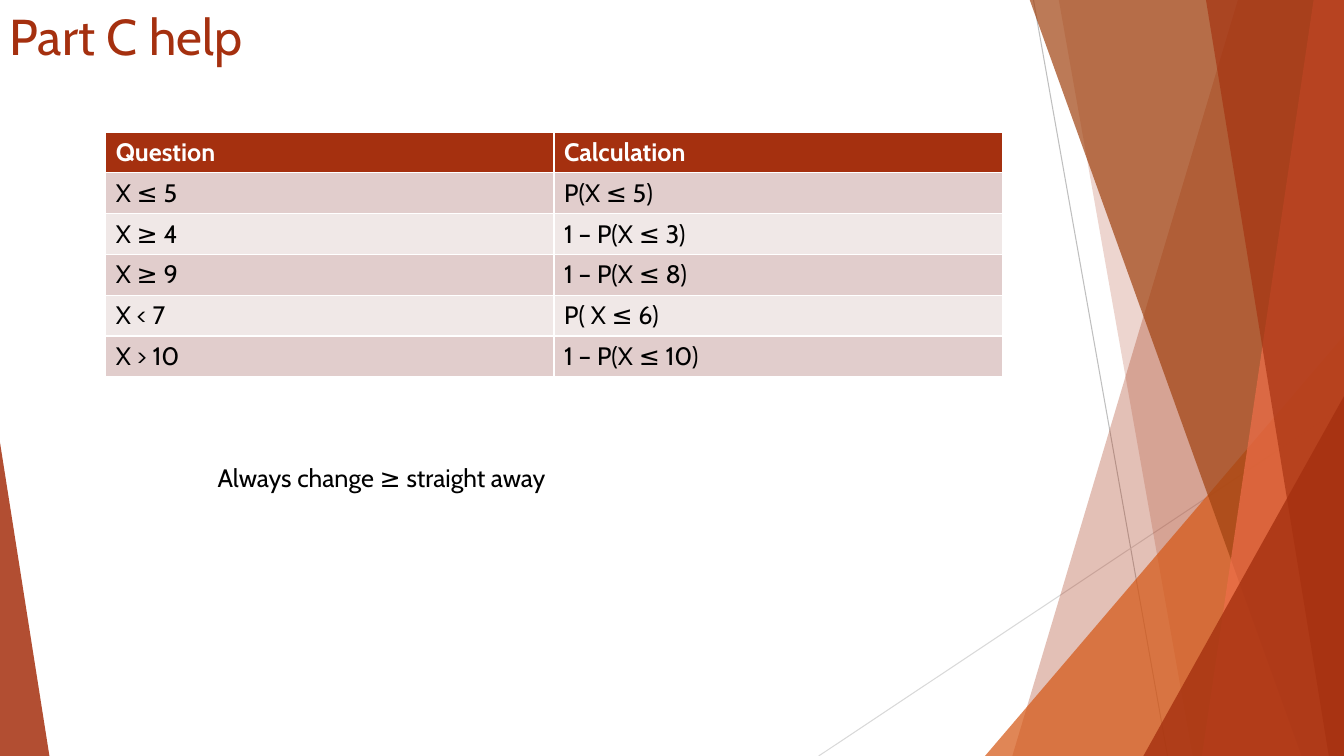
from dataclasses import dataclass

from lxml.etree import SubElement as Sub
from pptx import Presentation
from pptx.dml.color import RGBColor as Rgb
from pptx.enum.shapes import MSO_CONNECTOR as Link, MSO_SHAPE as Kind
from pptx.oxml.ns import qn
from pptx.shapes.autoshape import Shape
from pptx.slide import Slide
from pptx.text.text import TextFrame as Frame
from pptx.util import Inches, Pt

WIDE, HIGH = 13.33, 7.5


@dataclass(frozen=True)
class Theme:
    font: str = "Cabin"
    head: int = 36
    body: int = 18
    red: str = "A5300F"
    orange: str = "D55816"
    brown: str = "A04210"
    coral: str = "EE6E4A"
    black: str = "000000"
    white: str = "FFFFFF"
    dark: str = "E1CDCC"
    light: str = "F0E8E7"
    grey: str = "BFBFBF"
    pale: str = "D9D9D9"


LOOK = Theme()


@dataclass(frozen=True)
class Ray:
    start: tuple[float, float]
    end: tuple[float, float]
    color: str


@dataclass(frozen=True)
class Band:
    """A full-height facet whose left edge slants from top to foot."""
    top: float
    foot: float
    color: str
    alpha: int


@dataclass(frozen=True)
class Peak:
    """A triangle on the slide's lower edge; apex 0 is left, 1 is right."""
    left: float
    top: float
    width: float
    apex: int
    color: str
    alpha: int


@dataclass(frozen=True)
class Note:
    text: str
    box: tuple[float, float, float, float]
    size: int
    color: str
    wrap: bool


RAYS = [
    Ray((10.25, 0), (11.58, HIGH), LOOK.grey),
    Ray((WIDE, 4.03), (8.12, HIGH), LOOK.pale),
]
FACETS = [
    Band(12.28, 10.04, LOOK.red, 30),
    Band(10.5, 11.83, LOOK.red, 20),
    Peak(9.77, 3.33, 3.56, 1, LOOK.orange, 72),
    Band(10.21, 12.91, LOOK.brown, 70),
    Band(13.03, 11.92, LOOK.coral, 70),
    Band(11.96, 13.18, LOOK.red, 65),
    Peak(11.34, 3.93, 1.99, 1, LOOK.red, 80),
    Peak(0, 4.39, 0.49, 0, LOOK.red, 85),
]
NOTES = [
    Note("Part C help", (0, 0, 9.4, 0.78), LOOK.head, LOOK.red, True),
    Note("Always change ≥ straight away", (2.06, 4.54, 3.65, 0.4),
         LOOK.body, LOOK.black, False),
]
ROWS = [
    ("Question", "Calculation"),
    ("X ≤ 5", "P(X ≤ 5)"),
    ("X ≥ 4", "1 – P(X ≤ 3)"),
    ("X ≥ 9", "1 – P(X ≤ 8)"),
    ("X < 7", "P( X ≤ 6)"),
    ("X > 10", "1 – P(X ≤ 10)"),
]


def draw_ray(slide: Slide, ray: Ray) -> None:
    ends = [Inches(n) for n in ray.start + ray.end]
    line = slide.shapes.add_connector(Link.STRAIGHT, *ends)
    line.line.color.rgb = Rgb.from_string(ray.color)
    line.line.width = Pt(0.75)
    Sub(line._element.spPr, qn("a:effectLst"))


def add_band(slide: Slide, band: Band) -> Shape:
    edge = [(band.top, -0.01), (WIDE, -0.01), (WIDE, HIGH), (band.foot, HIGH)]
    first, *rest = [(Inches(x), Inches(y)) for x, y in edge]
    form = slide.shapes.build_freeform(*first)
    form.add_line_segments(rest, close=True)
    return form.convert_to_shape()


def add_peak(slide: Slide, peak: Peak) -> Shape:
    box = (peak.left, peak.top, peak.width, HIGH - peak.top)
    shape = slide.shapes.add_shape(Kind.ISOSCELES_TRIANGLE, *map(Inches, box))
    shape.adjustments[0] = peak.apex
    return shape


def draw_facet(slide: Slide, facet: Band | Peak) -> None:
    add = add_band if isinstance(facet, Band) else add_peak
    shape = add(slide, facet)
    shape.shadow.inherit = False
    shape.line.fill.background()
    shape.fill.solid()
    shape.fill.fore_color.rgb = Rgb.from_string(facet.color)
    tint = shape._element.spPr.find(qn("a:solidFill"))[0]
    Sub(tint, qn("a:alpha"), val=str(facet.alpha * 1000))


def put_text(frame: Frame, text: str, size: int, color: str,
             bold: bool = False) -> None:
    frame.text = text
    font = frame.paragraphs[0].runs[0].font
    font.name, font.size, font.bold = LOOK.font, Pt(size), bold
    font.color.rgb = Rgb.from_string(color)


def draw_note(slide: Slide, note: Note) -> None:
    frame = slide.shapes.add_textbox(*map(Inches, note.box)).text_frame
    frame.word_wrap = note.wrap
    put_text(frame, note.text, note.size, note.color)


def draw_table(slide: Slide) -> None:
    box = map(Inches, (1.05, 1.31, 8.89, 2.43))
    table = slide.shapes.add_table(len(ROWS), len(ROWS[0]), *box).table
    for r, row in enumerate(ROWS):
        head = r == 0
        fill = LOOK.red if head else LOOK.dark if r % 2 else LOOK.light
        ink = LOOK.white if head else LOOK.black
        for c, text in enumerate(row):
            cell = table.cell(r, c)
            cell.fill.solid()
            cell.fill.fore_color.rgb = Rgb.from_string(fill)
            put_text(cell.text_frame, text, LOOK.body, ink, head)


def main() -> None:
    deck = Presentation()
    deck.slide_width, deck.slide_height = Inches(WIDE), Inches(HIGH)
    slide = deck.slides.add_slide(deck.slide_layouts[6])
    for ray in RAYS:
        draw_ray(slide, ray)
    for facet in FACETS:
        draw_facet(slide, facet)
    for note in NOTES:
        draw_note(slide, note)
    draw_table(slide)
    deck.save("out.pptx")


if __name__ == "__main__":
    main()
